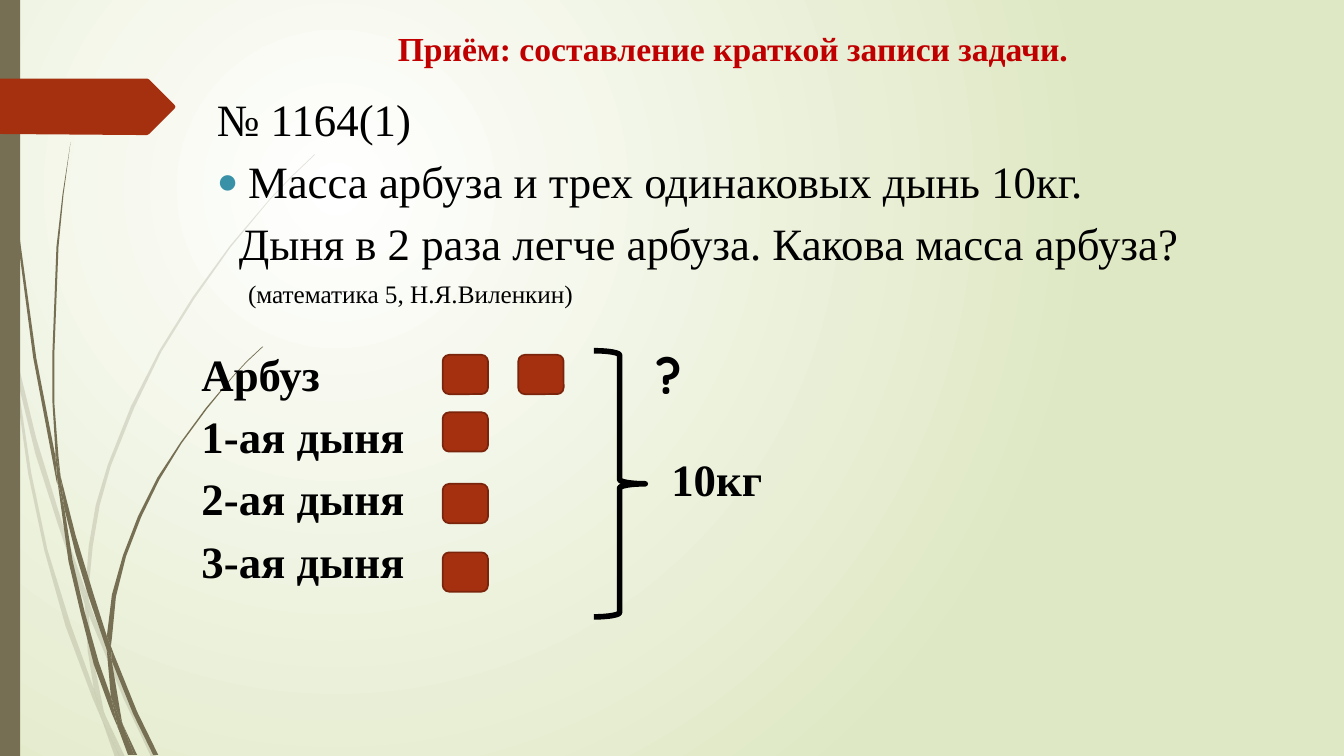
from lxml import etree
from pptx import Presentation
from pptx.dml.color import RGBColor
from pptx.enum.shapes import MSO_SHAPE
from pptx.enum.text import MSO_ANCHOR, MSO_AUTO_SIZE, PP_ALIGN
from pptx.oxml.ns import qn
from pptx.util import Emu, Pt

PX = 9144  # 100 px to the inch
RECT = MSO_SHAPE.RECTANGLE
ROUND = MSO_SHAPE.ROUNDED_RECTANGLE
BRACE = MSO_SHAPE.RIGHT_BRACE
TOP = MSO_ANCHOR.TOP
FIXED = MSO_AUTO_SIZE.NONE
LEFT, CENTER = PP_ALIGN.LEFT, PP_ALIGN.CENTER
SERIF = "Times New Roman"
HUES = {"white": "FFFFFF", "lime": "DFE8C4", "olive": "766F54", "rust": "A53010",
        "edge": "7A240C", "red": "C00000", "teal": "3891A7", "black": "000000"}

# Outlines of the grass: pale blades behind, dark ones in front
PALE = [
    [(11, 350), (9, 322), (0, 282), (0, 299), (10, 344)],
    [(58, 522), (84, 599), (85, 586), (62, 520), (36, 435), (14, 345), (17, 376), (35, 450)],
    [(92, 607), (88, 596), (88, 610), (123, 694), (150, 751), (155, 751), (127, 692)],
    [(119, 751), (124, 751), (105, 711)],
    [(93, 683), (70, 619), (47, 545), (31, 469), (17, 376), (11, 350), (28, 470),
     (44, 546), (65, 621), (92, 693), (101, 714), (99, 707)],
    [(84, 599), (87, 646), (93, 683), (96, 692), (105, 711), (103, 706), (91, 646), (88, 610), (88, 608)],
    [(88, 584), (92, 542), (99, 501), (110, 462), (133, 405), (160, 349), (193, 296), (229, 245),
     (268, 198), (290, 175), (312, 154), (312, 153), (289, 175), (268, 197), (228, 244), (191, 295),
     (158, 348), (130, 403), (107, 461), (95, 501), (88, 542), (85, 584), (85, 586), (88, 596)],
    [(101, 714), (114, 751), (119, 751)],
    [(88, 608), (88, 596), (85, 586), (84, 599)],
    [(96, 692), (93, 683), (99, 707), (101, 714), (119, 751), (105, 711)],
]
DARK = [
    [(7, 110), (17, 233), (33, 355), (56, 477), (57, 481), (55, 453), (36, 355),
     (19, 232), (8, 109), (5, 48), (4, 0), (3, 0), (4, 48)],
    [(88, 592), (106, 645), (106, 631), (93, 590), (75, 531), (60, 472), (64, 505), (75, 549)],
    [(113, 649), (110, 641), (111, 656), (132, 708), (152, 749), (157, 749), (136, 706)],
    [(110, 691), (98, 657), (84, 607), (72, 556), (64, 505), (57, 477), (68, 557),
     (80, 608), (93, 659), (111, 708), (117, 722), (116, 717)],
    [(60, 472), (58, 453), (54, 401), (54, 349), (58, 245), (63, 193), (70, 141),
     (62, 193), (56, 245), (52, 349), (52, 399), (55, 449)],
    [(133, 749), (136, 749), (122, 719)],
    [(57, 477), (64, 505), (60, 472), (55, 449), (55, 453)],
    [(111, 633), (115, 592), (125, 552), (140, 513), (158, 476), (180, 440), (205, 406), (231, 374),
     (245, 359), (261, 344), (260, 344), (245, 358), (231, 373), (204, 405), (179, 439), (156, 474),
     (137, 512), (122, 551), (111, 590), (106, 631), (110, 641)],
    [(117, 722), (127, 749), (131, 749)],
    [(106, 645), (110, 691), (116, 706), (122, 719), (121, 716), (111, 656), (109, 651)],
    [(106, 645), (109, 651), (111, 656), (110, 641), (106, 631)],
    [(116, 706), (110, 691), (116, 717), (117, 722), (130, 749), (133, 749), (122, 719)],
]
FLAG = [(0, 78), (146, 78), (148, 79), (173, 104), (174, 106), (173, 108),
        (148, 133), (146, 134), (136, 134), (0, 133)]


def rgb(hue):
    return RGBColor.from_string(HUES[hue])


def emu(*sizes):
    return [Emu(size * PX) for size in sizes]


def paint(shape, fill=None, line=None, width=1.25):
    shape.shadow.inherit = False
    if fill:
        shape.fill.solid()
        shape.fill.fore_color.rgb = rgb(fill)
    else:
        shape.fill.background()
    if line:
        shape.line.color.rgb = rgb(line)
        shape.line.width = Pt(width)
    else:
        shape.line.fill.background()


def add_form(slide, kind, box, **style):
    paint(slide.shapes.add_shape(kind, *emu(*box)), **style)


def add_free(slide, edge, fill="olive", alpha=None):
    pen = slide.shapes.build_freeform(*edge[0], scale=PX)
    pen.add_line_segments(edge[1:], close=True)
    shape = pen.convert_to_shape()
    paint(shape, fill)
    if alpha:
        tint = shape.element.spPr.find(".//" + qn("a:srgbClr"))
        etree.SubElement(tint, qn("a:alpha"), val=str(alpha * 1000))


def set_mark(props, mark, hue):
    if not mark:
        etree.SubElement(props, qn("a:buNone"))
        return
    tint = etree.SubElement(props, qn("a:buClr"))
    etree.SubElement(tint, qn("a:srgbClr"), val=HUES[hue])
    etree.SubElement(props, qn("a:buSzPct"), val="80000")
    etree.SubElement(props, qn("a:buFont"), typeface="Arial")
    etree.SubElement(props, qn("a:buChar"), char=mark)


def write(para, text, size=32, font=SERIF, hue="black", bold=False,
          align=LEFT, before=0, left=0, hang=0, mark=None):
    para.alignment = align
    para.space_before = Pt(before)
    props = para._p.get_or_add_pPr()
    props.set("marL", str(left * PX))
    props.set("indent", str(-hang * PX))
    set_mark(props, mark, "teal")
    run = para.add_run()
    run.text = text
    run.font.size, run.font.name, run.font.bold = Pt(size), font, bold
    run.font.color.rgb = rgb(hue)


def fill_text(shape, box, lines, wrap=True, **style):
    """Place the shape and give it one paragraph per (text, format) pair."""
    shape.left, shape.top, shape.width, shape.height = emu(*box)
    frame = shape.text_frame
    frame.word_wrap = wrap
    frame.auto_size = FIXED
    frame.vertical_anchor = TOP
    for i, (text, own) in enumerate(lines):
        para = frame.add_paragraph() if i else frame.paragraphs[0]
        write(para, text, **{**style, **own})


def add_text(slide, box, lines, **style):
    fill_text(slide.shapes.add_textbox(*emu(*box)), box, lines, **style)


def set_back(slide):
    fill = slide.background.fill
    fill.gradient()
    for stop, hue in zip(fill.gradient_stops, ("white", "lime")):
        stop.color.rgb = rgb(hue)
    grad = slide.element.find(".//" + qn("a:gradFill"))
    ring = etree.Element(qn("a:path"), path="circle")
    etree.SubElement(ring, qn("a:fillToRect"), l="50000", t="50000", r="100000", b="100000")
    grad.replace(grad.find(qn("a:lin")), ring)


def add_decor(slide):
    for edge in PALE:
        add_free(slide, edge, alpha=20)
    for edge in DARK:
        add_free(slide, edge)
    add_form(slide, RECT, (0, 0, 20, 750), fill="olive")
    add_free(slide, FLAG, fill="rust")


def main():
    deck = Presentation()
    deck.slide_width, deck.slide_height = emu(1333, 750)
    slide = deck.slides.add_slide(deck.slide_layouts[1])
    set_back(slide)
    add_decor(slide)

    title, body = slide.placeholders
    for holder in (title, body):
        slide.shapes.element.append(holder.element)  # in front of the decor
    fill_text(title, (196, 23, 1062, 64),
              [("Приём: составление краткой записи задачи.", {})],
              size=24, hue="red", bold=True, align=CENTER)
    fill_text(body, (196, 86, 1062, 219), [
        ("№ 1164(1)", {"left": 9}),
        ("Масса арбуза и трех одинаковых дынь 10кг.", {"left": 40, "hang": 31, "mark": "●"}),
        ("Дыня в 2 раза легче арбуза. Какова масса арбуза?", {"left": 31}),
        ("(математика 5, Н.Я.Виленкин)", {"left": 40, "size": 18}),
    ], before=6)

    names = ["Арбуз", "1-ая дыня", "2-ая дыня", "3-ая дыня"]
    add_text(slide, (181, 339, 667, 251), [(name, {}) for name in names],
             bold=True, before=6, left=9)
    for x, y in [(439, 409), (439, 480), (439, 548), (439, 352), (514, 352)]:
        add_form(slide, ROUND, (x, y, 45, 39), fill="rust", line="edge")
    add_form(slide, BRACE, (589, 348, 51, 264), line="black", width=4)
    add_text(slide, (656, 443, 112, 64), [("10кг", {})], wrap=False, bold=True)
    add_text(slide, (640, 336, 50, 71), [("?", {})], wrap=False, bold=True,
             size=36, font="Quicksand")
    deck.save("out.pptx")


if __name__ == "__main__":
    main()
